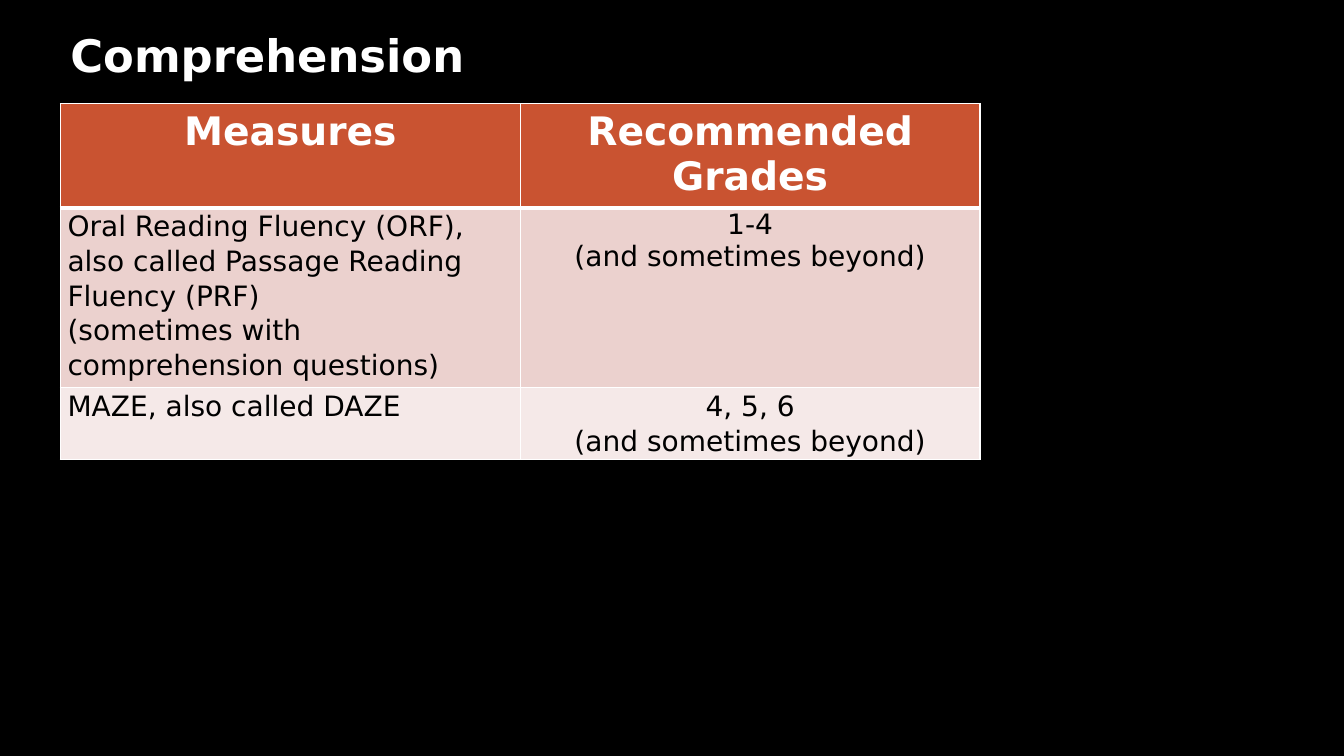
from lxml import etree
from pptx import Presentation
from pptx.dml.color import RGBColor
from pptx.enum.text import MSO_ANCHOR, PP_ALIGN
from pptx.oxml.ns import qn
from pptx.util import Inches, Pt

LEFT, CENTER = PP_ALIGN.LEFT, PP_ALIGN.CENTER
MIDDLE = MSO_ANCHOR.MIDDLE

FONT = "DejaVu Sans"
COLORS = {"black": "000000", "white": "FFFFFF", "header": "C95331",
          "odd": "EBD1CE", "even": "F5E9E8"}

TITLE = "Comprehension"
HEADER = ["Measures", "Recommended Grades"]
# Each cell: its paragraphs and their line spacing; \v is a line break
BODY = [
    [(["Oral Reading Fluency (ORF), also called Passage Reading Fluency (PRF)",
       "(sometimes with comprehension questions)"], 1.07),
     (["1-4\v(and sometimes beyond)"], 1.0)],
    [(["MAZE, also called DAZE"], 1.07),
     (["4, 5, 6\v(and sometimes beyond)"], 1.07)],
]
GRID = [[([name], 1.0) for name in HEADER]] + BODY

SLIDE_W, SLIDE_H = 13.33, 7.5
MARGIN = 0.6
TABLE_TOP = 1.03
COL_W = 4.56
ROW_H = [1.0, 1.73, 0.69]


def rgb(name):
    return RGBColor.from_string(COLORS[name])


def write(tf, paragraphs, spacing, align, size, color, bold):
    tf.text = "\n".join(paragraphs)
    tf.word_wrap = True
    for p in tf.paragraphs:
        p.alignment = align
        p.line_spacing = spacing
        for r in p.runs:
            r.font.name = FONT
            r.font.size = Pt(size)
            r.font.bold = bold
            r.font.color.rgb = rgb(color)


def set_borders(cell, widths):
    """Draw white borders; widths gives points for each side tag."""
    tcPr = cell._tc.get_or_add_tcPr()
    for i, (tag, width) in enumerate(widths.items()):
        ln = etree.Element(qn("a:" + tag), w=str(Pt(width)))
        fill = etree.SubElement(ln, qn("a:solidFill"))
        etree.SubElement(fill, qn("a:srgbClr"), val=COLORS["white"])
        tcPr.insert(i, ln)


def add_title(s):
    box = s.shapes.add_textbox(Inches(MARGIN), Inches(0.12), Inches(9.5), Inches(0.8))
    box.text_frame.vertical_anchor = MIDDLE
    write(box.text_frame, [TITLE], 1.1, LEFT, 32, "white", True)


def add_measures_table(s):
    n_cols = len(HEADER)
    table = s.shapes.add_table(len(GRID), n_cols, Inches(MARGIN), Inches(TABLE_TOP),
                               Inches(COL_W * n_cols), Inches(sum(ROW_H))).table
    for col in table.columns:
        col.width = Inches(COL_W)
    for i, row in enumerate(GRID):
        table.rows[i].height = Inches(ROW_H[i])
        is_header = i == 0
        fill = "header" if is_header else ("odd" if i % 2 else "even")
        pad_x, pad_y = (0.1, 0.05) if is_header else (0.07, 0)
        for j, (paragraphs, spacing) in enumerate(row):
            cell = table.cell(i, j)
            cell.margin_left = cell.margin_right = Inches(pad_x)
            cell.margin_top = cell.margin_bottom = Inches(pad_y)
            cell.fill.solid()
            cell.fill.fore_color.rgb = rgb(fill)
            align = CENTER if is_header or j == 1 else LEFT
            size, color = (28, "white") if is_header else (20, "black")
            write(cell.text_frame, paragraphs, spacing, align, size, color, is_header)
            set_borders(cell, {"lnL": 1, "lnR": 1, "lnT": 3 if i == 1 else 1,
                               "lnB": 3 if is_header else 1})


def main():
    prs = Presentation()
    prs.slide_width, prs.slide_height = Inches(SLIDE_W), Inches(SLIDE_H)
    s = prs.slides.add_slide(prs.slide_layouts[6])
    s.background.fill.solid()
    s.background.fill.fore_color.rgb = rgb("black")
    add_title(s)
    add_measures_table(s)
    prs.save("out.pptx")


if __name__ == "__main__":
    main()
